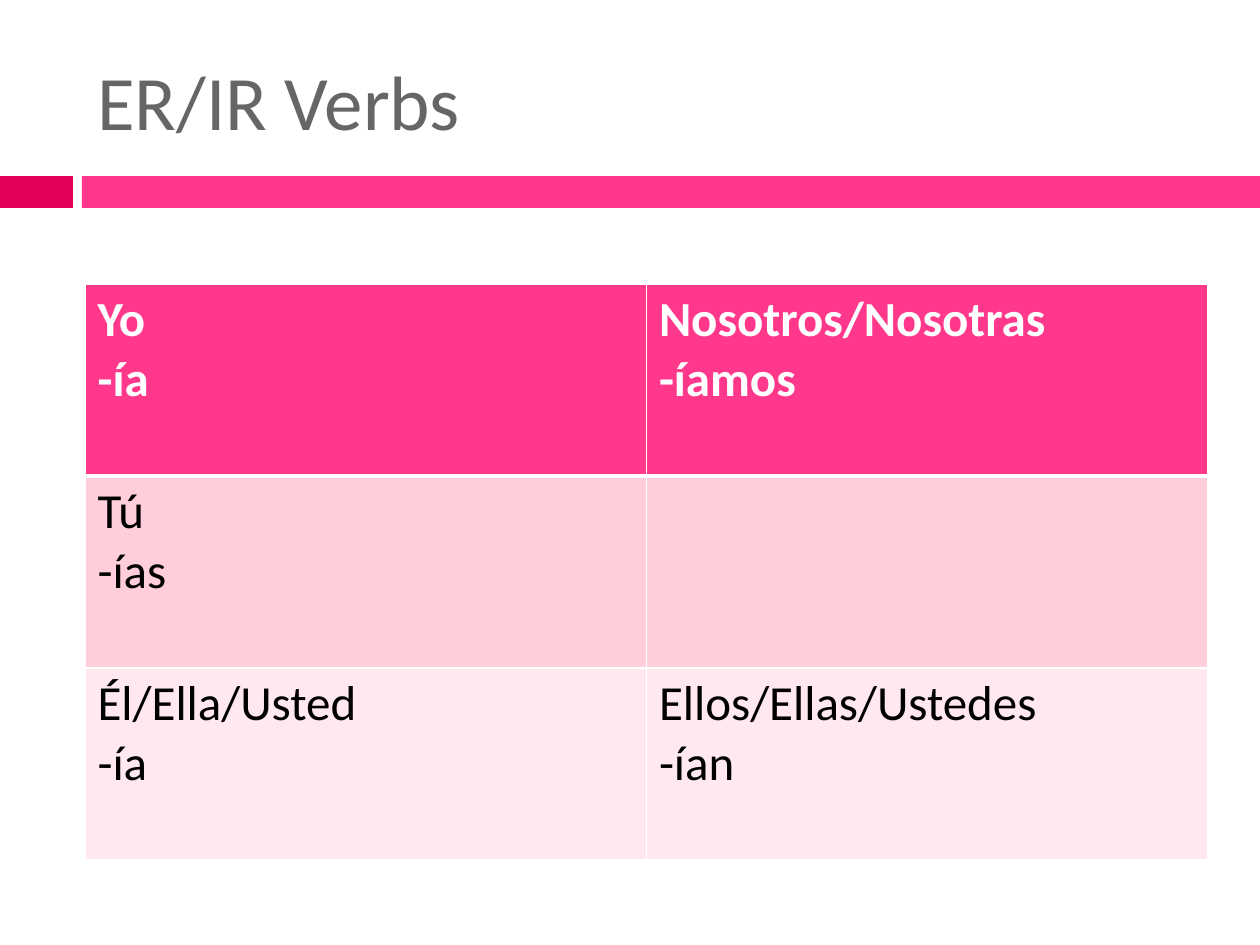
from dataclasses import dataclass

from lxml import etree
from pptx import Presentation, util as u
from pptx.dml.color import RGBColor
from pptx.enum import shapes, text
from pptx.oxml import ns

PX = u.Inches(1) // 126


@dataclass(frozen=True)
class Theme:
    font: str = "Calibri"
    title_size: int = 44
    cell_size: int = 28
    title: str = "666666"
    accent: str = "FF388C"
    accent_dark: str = "E40059"
    band_dark: str = "FFCEDA"
    band_light: str = "FFE8EE"
    light: str = "FFFFFF"
    dark: str = "000000"


THEME = Theme()

# Each cell holds a pronoun and its verb ending
ENDINGS = [
    [("Yo", "-ía"), ("Nosotros/Nosotras", "-íamos")],
    [("Tú", "-ías"), ()],
    [("Él/Ella/Usted", "-ía"), ("Ellos/Ellas/Ustedes", "-ían")],
]


def px(*lengths):
    return [length * PX for length in lengths]


def write_lines(frame, lines, size, color, bold=False):
    for index, line in enumerate(lines):
        para = frame.paragraphs[0] if index == 0 else frame.add_paragraph()
        para.text = line
        para.font.name = THEME.font
        para.font.size = u.Pt(size)
        para.font.bold = bold
        para.font.color.rgb = RGBColor.from_string(color)


def add_bar(page, left, width, color):
    bar = page.shapes.add_shape(shapes.MSO_SHAPE.RECTANGLE, *px(left, 176, width, 32))
    bar.shadow.inherit = False
    bar.fill.solid()
    bar.fill.fore_color.rgb = RGBColor.from_string(color)
    bar.line.fill.background()


def add_title(page, title):
    box = page.shapes.add_textbox(*px(85, 32, 1123, 136))
    box.text_frame.word_wrap = True
    box.text_frame.vertical_anchor = text.MSO_ANCHOR.MIDDLE
    write_lines(box.text_frame, [title], THEME.title_size, THEME.title)


def set_borders(cell, widths):
    properties = cell._tc.get_or_add_tcPr()
    for side, width in widths.items():
        line = etree.SubElement(properties, ns.qn(f"a:ln{side}"), w=str(u.Pt(width)))
        fill = etree.SubElement(line, ns.qn("a:solidFill"))
        etree.SubElement(fill, ns.qn("a:srgbClr"), val=THEME.light)


def add_endings_table(page, rows):
    row_fills = [THEME.accent, THEME.band_dark, THEME.band_light]
    frame = page.shapes.add_table(len(rows), 2, *px(85, 284, 1123, 576))
    table = frame.table
    for row_index, (cells, fill) in enumerate(zip(rows, row_fills)):
        is_header = row_index == 0
        top = 3 if row_index == 1 else 1
        bottom = 3 if is_header else 1
        for column_index, lines in enumerate(cells):
            cell = table.cell(row_index, column_index)
            set_borders(cell, {"L": 1, "R": 1, "T": top, "B": bottom})
            cell.fill.solid()
            cell.fill.fore_color.rgb = RGBColor.from_string(fill)
            color = THEME.light if is_header else THEME.dark
            write_lines(cell.text_frame, lines, THEME.cell_size, color, is_header)


def main():
    deck = Presentation()
    deck.slide_width, deck.slide_height = px(1260, 945)
    page = deck.slides.add_slide(deck.slide_layouts[6])

    # Divider band
    add_bar(page, 0, 73, THEME.accent_dark)
    add_bar(page, 82, 1178, THEME.accent)

    # Title and verb endings
    add_title(page, "ER/IR Verbs")
    add_endings_table(page, ENDINGS)

    deck.save("out.pptx")


if __name__ == "__main__":
    main()
